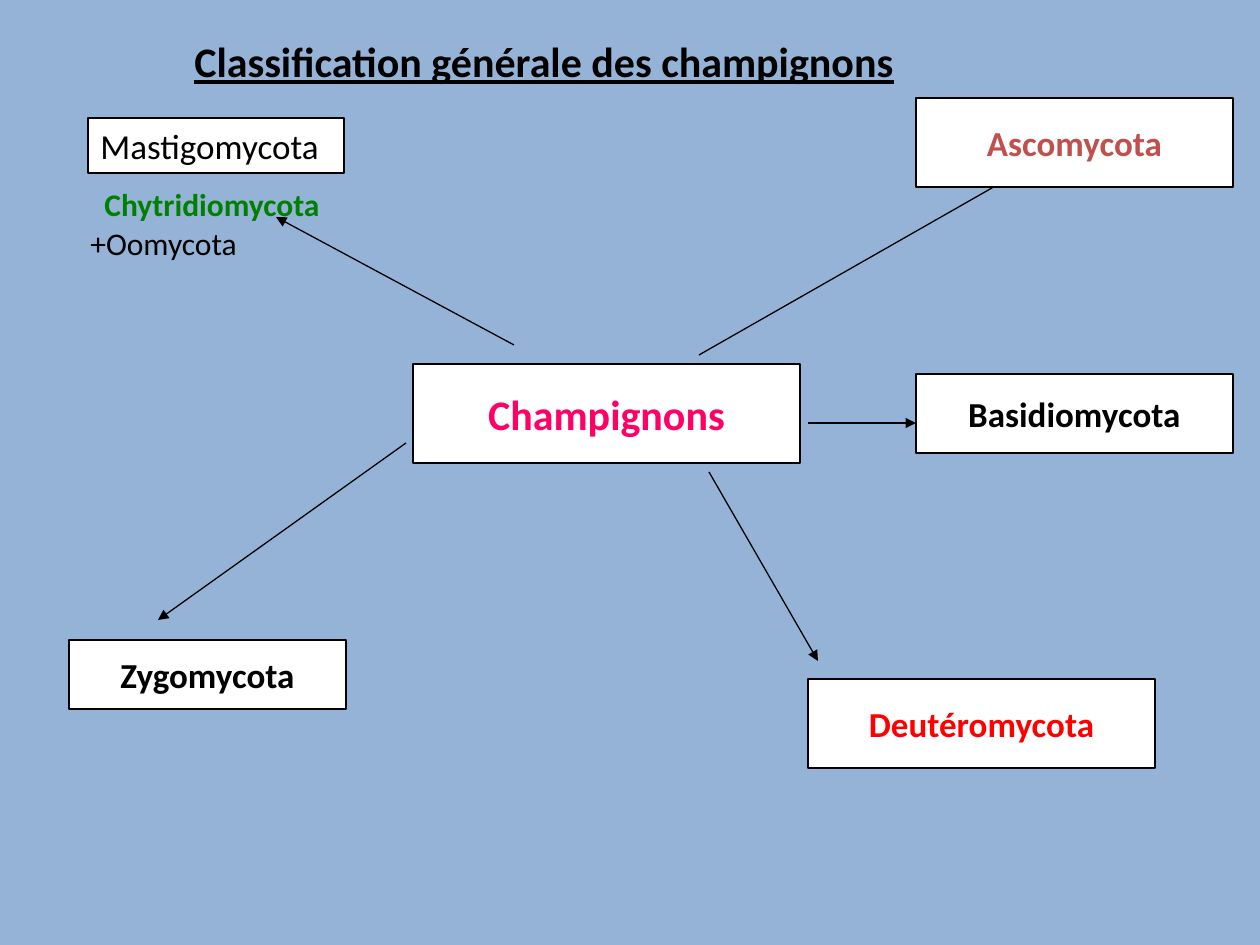
"""Build the slide on the general classification of fungi."""
from dataclasses import dataclass

from lxml.etree import SubElement
from pptx import Presentation
from pptx.dml.color import RGBColor
from pptx.enum.shapes import MSO_CONNECTOR, MSO_SHAPE
from pptx.enum.text import MSO_ANCHOR, PP_ALIGN
from pptx.oxml.ns import qn
from pptx.util import Emu, Pt


@dataclass(frozen=True)
class Theme:
    font: str = "Calibri"
    back: str = "95B3D7"
    box: str = "FFFFFF"
    ink: str = "000000"
    pink: str = "FF0066"
    brick: str = "C0504D"
    red: str = "FF0000"
    green: str = "008000"
    large: int = 24
    medium: int = 20
    small: int = 18
    line: float = 0.75


T = Theme()
SCALE = 914400 / 126


def px(*values):
    return [Emu(round(v * SCALE)) for v in values]


def write(shape, text, size, color, bold=True, align=PP_ALIGN.CENTER, wrap=False):
    tf = shape.text_frame
    tf.word_wrap = wrap
    tf.vertical_anchor = MSO_ANCHOR.MIDDLE
    p = tf.paragraphs[0]
    p.text = text
    p.alignment = align
    p.font.name = T.font
    p.font.size = Pt(size)
    p.font.bold = bold
    p.font.color.rgb = RGBColor.from_string(color)
    return p


prs = Presentation()
prs.slide_width, prs.slide_height = px(1260, 945)
s = prs.slides.add_slide(prs.slide_layouts[5])
s.background.fill.solid()
s.background.fill.fore_color.rgb = RGBColor.from_string(T.back)

title = s.shapes.title
title.left, title.top, title.width, title.height = px(178, 29, 732, 63)
p = write(title, "Classification générale des champignons", T.large, T.ink)
p.font.underline = True

labels = [
    ("Chytridiomycota", (69, 178, 286, 52), T.green, True, PP_ALIGN.CENTER),
    ("+Oomycota", (78, 217, 188, 51), T.ink, False, PP_ALIGN.LEFT),
]
for text, place, color, bold, align in labels:
    tb = s.shapes.add_textbox(*px(*place))
    write(tb, text, T.small, color, bold, align)

arrows = [
    (514, 345, 276, 217),
    (699, 355, 1027, 168),
    (406, 443, 158, 620),
    (808, 423, 916, 423),
    (709, 472, 818, 661),
]
for ends in arrows:
    c = s.shapes.add_connector(MSO_CONNECTOR.STRAIGHT, *px(*ends))
    c.line.color.rgb = RGBColor.from_string(T.ink)
    c.line.width = Pt(T.line)
    SubElement(c.line._get_or_add_ln(), qn("a:tailEnd"), type="triangle")
    SubElement(c._element.spPr, qn("a:effectLst"))

boxes = [
    ("Mastigomycota", (88, 118, 256, 55), T.medium, T.ink, False, PP_ALIGN.LEFT),
    ("Champignons", (413, 364, 387, 99), T.large, T.pink, True, PP_ALIGN.CENTER),
    ("Ascomycota", (916, 98, 317, 89), T.medium, T.brick, True, PP_ALIGN.CENTER),
    ("Zygomycota", (69, 640, 277, 69), T.medium, T.ink, True, PP_ALIGN.CENTER),
    ("Basidiomycota", (916, 374, 317, 79), T.medium, T.ink, True, PP_ALIGN.CENTER),
    ("Deutéromycota", (808, 679, 347, 89), T.medium, T.red, True, PP_ALIGN.CENTER),
]
for text, place, size, color, bold, align in boxes:
    sp = s.shapes.add_shape(MSO_SHAPE.RECTANGLE, *px(*place))
    sp.shadow.inherit = False
    sp.fill.solid()
    sp.fill.fore_color.rgb = RGBColor.from_string(T.box)
    sp.line.color.rgb = RGBColor.from_string(T.ink)
    sp.line.width = Pt(T.line)
    write(sp, text, size, color, bold, align)

prs.save("out.pptx")
